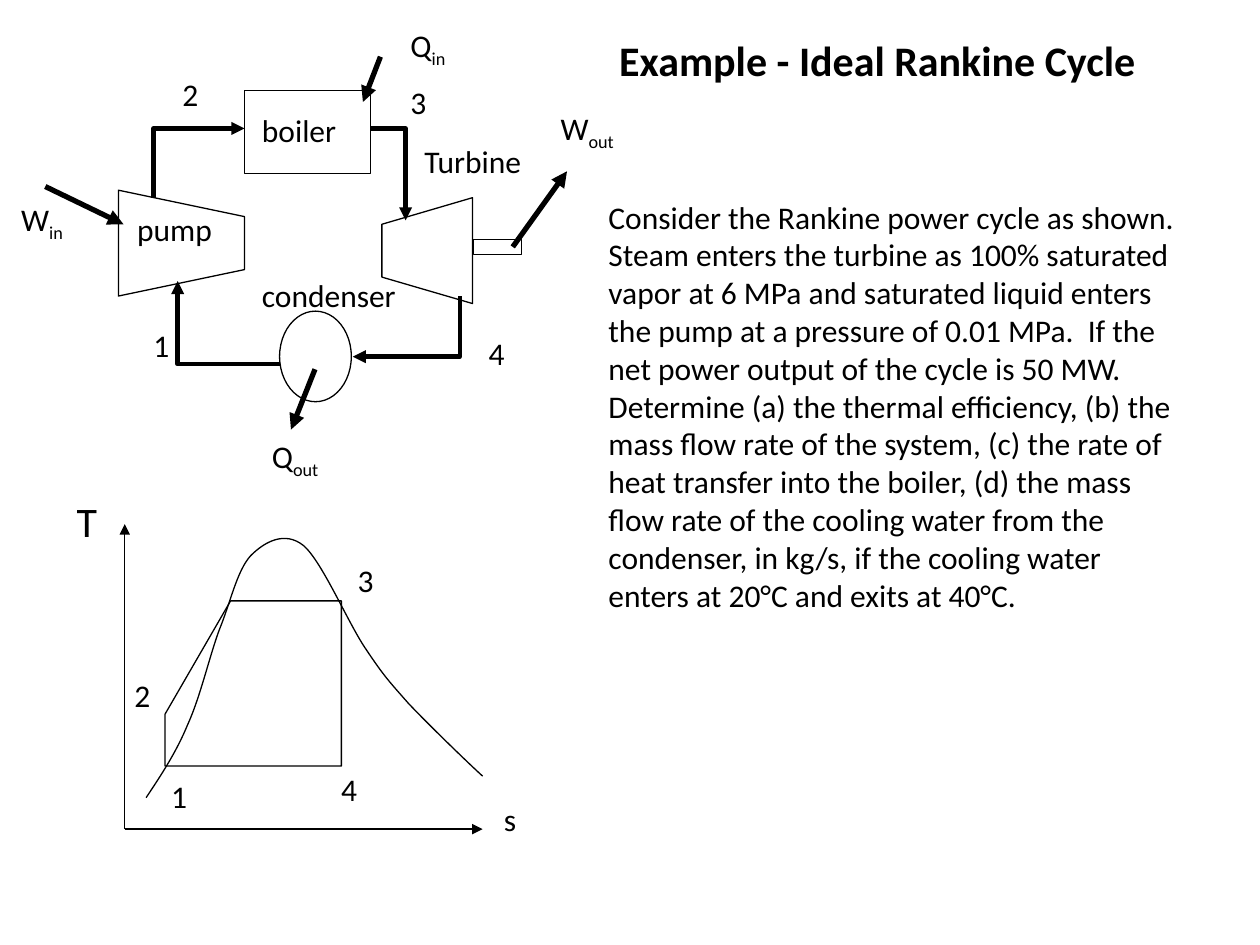
from typing import NamedTuple

from lxml.etree import SubElement
from pptx import Presentation
from pptx.dml.color import RGBColor
from pptx.enum.shapes import MSO_CONNECTOR, MSO_SHAPE
from pptx.enum.text import MSO_ANCHOR, MSO_AUTO_SIZE, PP_ALIGN
from pptx.oxml.ns import qn
from pptx.util import Pt

FONT = "Calibri"
BLACK = "000000"
THIN, PIPE, ENERGY = 0.75, 2.5, 3
LABEL_HEIGHT = 31

Point = tuple[float, float]


class Label(NamedTuple):
    text: str
    left: float
    top: float
    width: float = 24.5
    subscript: str = ""
    size: float = 18


class Arrow(NamedTuple):
    start: Point
    end: Point
    weight: float = ENERGY


class Outline(NamedTuple):
    points: list[Point]
    closed: bool = False
    weight: float = THIN
    arrow: bool = False


class Component(NamedTuple):
    preset: MSO_SHAPE
    left: float
    top: float
    width: float
    height: float


COMPONENTS = [
    Component(MSO_SHAPE.RECTANGLE, 139.7, 51.8, 72, 47.5),  # boiler
    Component(MSO_SHAPE.OVAL, 159.8, 177.8, 41, 51.8),  # condenser
    Component(MSO_SHAPE.RECTANGLE, 270.7, 136.8, 27.4, 8.6),  # turbine shaft
]
TURBINE = Outline([(270, 113), (218.2, 128.2), (218.2, 158.4), (270, 173.5)], closed=True)
PUMP = Outline([(67.7, 108.7), (139.7, 123.8), (139.7, 154.1), (67.7, 169.2)], closed=True)
PIPES = [
    Outline(points, weight=PIPE, arrow=True)
    for points in (
        [(211.7, 73.4), (231.8, 73.4), (231.8, 126)],
        [(262.8, 169.2), (262.8, 203.8), (201.6, 203.8)],
        [(159.8, 208.1), (101.5, 208.1), (101.5, 160.6)],
        [(87.8, 113), (87.8, 73.4), (139.7, 73.4)],
    )
]
CYCLE = Outline(
    [(94.3, 437.8), (94.3, 408.2), (131.8, 343.4), (195.1, 343.4), (195.1, 437.8)],
    closed=True,
)
# Start point, then two control points and an end point for each segment
SATURATION_DOME = Outline([
    (83.5, 455.8),
    (92.2, 442.8), (100.8, 429.8), (107.3, 414),
    (114.5, 398.2), (119.5, 375.8), (125.3, 360),
    (131.8, 344.2), (135.4, 326.2), (143.3, 317.5),
    (151.2, 309.6), (162.7, 303.1), (173.5, 311.8),
    (184.3, 321.1), (199.4, 357.1), (209.5, 371.5),
    (219.6, 386.6), (222.5, 389.5), (233.3, 401.8),
    (244.8, 414), (268.6, 437), (275.8, 443.5),
])
ORIGIN = (71.3, 473.8)
ARROWS = [
    Arrow((180, 211), (166.3, 245.5)),
    Arrow((217.4, 32.4), (207.4, 58.3)),
    Arrow((293, 141.1), (324, 97.9)),
    Arrow((25.9, 106.6), (70.6, 128.2)),
    Arrow(ORIGIN, (275.8, 473.8), THIN),
    Arrow(ORIGIN, (71.3, 299.5), THIN),
]
LABELS = [
    Label("Turbine", 235.4, 77.8, 77.8),
    Label("pump", 71.3, 116.6, 59.8),
    Label("condenser", 142.6, 154.1, 95.8),
    Label("boiler", 142.6, 59.8, 61.2),
    Label("1", 80.6, 182.9),
    Label("2", 97.2, 39.6),
    Label("3", 227.5, 43.9),
    Label("4", 272.2, 187.2),
    Label("Q", 148.3, 246.2, 45.4, "out"),
    Label("Q", 227.5, 11.5, 38.9, "in"),
    Label("W", 313.2, 59, 49.7, "out"),
    Label("W", 5, 110.9, 43.2, "in"),
    Label("T", 36.7, 279.4, 28.8, size=24),
    Label("s", 280.8, 453.6, 22.3),
    Label("1", 90.7, 440.6),
    Label("2", 69.8, 383),
    Label("3", 197.3, 316.8),
    Label("4", 187.9, 436.3),
]
PROBLEM = (
    "Consider the Rankine power cycle as shown.  Steam enters the turbine as 100% "
    "saturated vapor at 6 MPa and saturated liquid enters the pump at a pressure of "
    "0.01 MPa.  If the net power output of the cycle is 50 MW.  Determine (a) the "
    "thermal efficiency, (b) the mass flow rate of the system, (c) the rate of heat "
    "transfer into the boiler, (d) the mass flow rate of the cooling water from the "
    "condenser, in kg/s, if the cooling water enters at 20°C and exits at 40°C."
)


def color(value: str) -> RGBColor:
    return RGBColor.from_string(value)


def add_run(paragraph, text: str, size: float = 18, bold: bool = False):
    run = paragraph.add_run()
    run.text = text
    run.font.name, run.font.size, run.font.bold = FONT, Pt(size), bold
    run.font.color.rgb = color(BLACK)
    return run


def style_line(line, weight: float, arrow: bool = False) -> None:
    line.color.rgb = color(BLACK)
    line.width = Pt(weight)
    if arrow:
        SubElement(line._get_or_add_ln(), qn("a:tailEnd"), type="triangle")


def style_outline(shape, weight: float, arrow: bool = False) -> None:
    shape.shadow.inherit = False
    shape.fill.background()
    style_line(shape.line, weight, arrow)


def draw_component(shapes, part: Component) -> None:
    style_outline(shapes.add_shape(part.preset, *map(Pt, part[1:])), THIN)


def draw_outline(shapes, outline: Outline):
    start, *rest = [(Pt(x), Pt(y)) for x, y in outline.points]
    builder = shapes.build_freeform(*start)
    builder.add_line_segments(rest, close=outline.closed)
    shape = builder.convert_to_shape()
    style_outline(shape, outline.weight, outline.arrow)
    return shape


def draw_curve(shapes, outline: Outline) -> None:
    """Draw the outline, then join each three straight segments into one Bézier."""
    geometry = draw_outline(shapes, outline)._element.find(".//" + qn("a:path"))
    segments = geometry.findall(qn("a:lnTo"))
    for first in range(0, len(segments), 3):
        bezier = SubElement(geometry, qn("a:cubicBezTo"))
        for segment in segments[first:first + 3]:
            bezier.append(segment[0])
            geometry.remove(segment)


def draw_arrow(shapes, arrow: Arrow) -> None:
    connector = shapes.add_connector(
        MSO_CONNECTOR.STRAIGHT, *map(Pt, arrow.start + arrow.end))
    style_line(connector.line, arrow.weight, arrow=True)
    SubElement(connector._element.spPr, qn("a:effectLst"))


def draw_label(shapes, label: Label) -> None:
    height = LABEL_HEIGHT * label.size / 18
    frame = shapes.add_textbox(
        *map(Pt, (label.left, label.top, label.width, height))).text_frame
    frame.word_wrap = False
    frame.auto_size = MSO_AUTO_SIZE.SHAPE_TO_FIT_TEXT
    paragraph = frame.paragraphs[0]
    add_run(paragraph, label.text, label.size)
    if label.subscript:
        subscript = add_run(paragraph, label.subscript, label.size)
        subscript.font._element.set("baseline", "-25000")


def draw_title(title) -> None:
    title.left, title.top, title.width, title.height = map(Pt, (296.6, 13.7, 409.7, 41))
    title.text_frame.vertical_anchor = MSO_ANCHOR.MIDDLE
    paragraph = title.text_frame.paragraphs[0]
    paragraph.alignment = PP_ALIGN.CENTER
    add_run(paragraph, "Example - Ideal Rankine Cycle", 24, bold=True)


def draw_problem(shapes) -> None:
    frame = shapes.add_textbox(*map(Pt, (340.6, 109.4, 342, 319))).text_frame
    frame.word_wrap = True
    add_run(frame.paragraphs[0], PROBLEM)


def main() -> None:
    presentation = Presentation()
    presentation.slide_width, presentation.slide_height = Pt(720), Pt(540)
    shapes = presentation.slides.add_slide(presentation.slide_layouts[5]).shapes
    draw_title(shapes.title)
    for component in COMPONENTS:
        draw_component(shapes, component)
    for outline in (TURBINE, PUMP, *PIPES, CYCLE):
        draw_outline(shapes, outline)
    draw_curve(shapes, SATURATION_DOME)
    for arrow in ARROWS:
        draw_arrow(shapes, arrow)
    for label in LABELS:
        draw_label(shapes, label)
    draw_problem(shapes)
    presentation.save("out.pptx")


if __name__ == "__main__":
    main()
